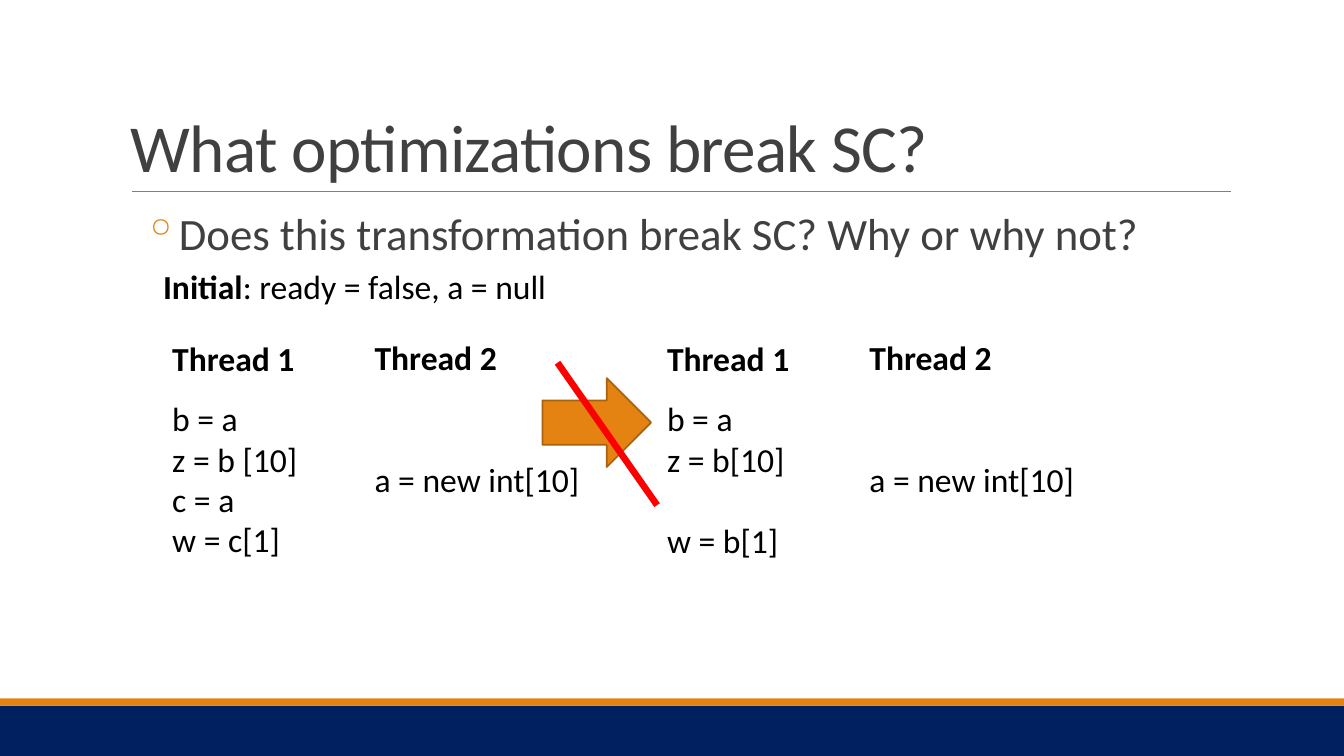
from lxml.etree import SubElement as Sub
from pptx import Presentation
from pptx.dml.color import RGBColor as RGB
from pptx.enum.shapes import MSO_CONNECTOR as Conn, MSO_SHAPE as Kind
from pptx.enum.text import MSO_ANCHOR as Anchor
from pptx.oxml.ns import qn
from pptx.util import Cm, Pt

HUES = {"navy": "002060", "orange": "E48312", "brown": "A9610D", "gray": "808080",
        "dark": "404040", "black": "000000", "red": "FF0000"}


class Deck:
    font = "Calibri"

    def __init__(self):
        self.prs = Presentation()
        self.prs.slide_width, self.prs.slide_height = Cm(33.87), Cm(19.05)
        self.slide = self.prs.slides.add_slide(self.prs.slide_layouts[6])

    def hue(self, name):
        return RGB.from_string(HUES[name])

    def shape(self, kind, box, fill, edge=None):
        item = self.slide.shapes.add_shape(kind, *map(Cm, box))
        item.shadow.inherit = False
        item.fill.solid()
        item.fill.fore_color.rgb = self.hue(fill)
        if edge:
            item.line.color.rgb = self.hue(edge)
            item.line.width = Pt(1.25)
        else:
            item.line.fill.background()

    def line(self, ends, hue, width):
        item = self.slide.shapes.add_connector(Conn.STRAIGHT, *map(Cm, ends))
        item.line.color.rgb = self.hue(hue)
        item.line.width = Pt(width)
        Sub(item._element.spPr, qn("a:effectLst"))

    def text(self, box, lines, size=24, hue="black"):
        """Each line is (text, count of bold leading letters, space before)."""
        frame = self.slide.shapes.add_textbox(*map(Cm, box)).text_frame
        frame.word_wrap = True
        for i, (words, bold, gap) in enumerate(lines):
            par = frame.paragraphs[0] if i == 0 else frame.add_paragraph()
            if gap:
                par.space_before = Pt(gap)
            for part, heavy in ((words[:bold], True), (words[bold:], False)):
                if part:
                    run = par.add_run()
                    run.text = part
                    run.font.name, run.font.size = self.font, Pt(size)
                    run.font.bold = heavy
                    run.font.color.rgb = self.hue(hue)
        return frame

    def title(self, box, words):
        frame = self.text(box, [(words, 0, 0)], 48, "dark")
        frame.vertical_anchor = Anchor.BOTTOM
        par = frame.paragraphs[0]
        par.line_spacing = 0.85
        par.runs[0]._r.get_or_add_rPr().set("spc", "-50")

    def bullet(self, box, words):
        frame = self.text(box, [(words, 0, 0)], 32, "dark")
        frame.margin_left = frame.margin_right = 0
        par = frame.paragraphs[0]
        par.line_spacing, par.space_after = 0.9, Pt(4)
        props = par._p.get_or_add_pPr()
        props.set("marL", str(Cm(1.07)))
        props.set("indent", str(Cm(-0.51)))
        tint = Sub(props, qn("a:buClr"))
        Sub(tint, qn("a:srgbClr")).set("val", HUES["orange"])
        Sub(props, qn("a:buChar")).set("char", "◦")

    def thread(self, box, name, code):
        self.text(box, [(name, len(name), 0)] + [(row, 0, gap) for row, gap in code])


def main():
    deck = Deck()

    # Footer bands and title rule
    deck.shape(Kind.RECTANGLE, (0, 17.78, 33.87, 1.27), "navy")
    deck.shape(Kind.RECTANGLE, (0, 17.6, 33.87, 0.18), "orange")
    deck.line((3.33, 4.83, 31.01, 4.83), "gray", 0.5)

    # Heading and question
    deck.title((3.05, 0.79, 27.94, 4.04), "What optimizations break SC?")
    deck.bullet((3.05, 5.2, 27.94, 2.24),
                "Does this transformation break SC? Why or why not?")
    deck.text((3.86, 6.58, 12.19, 1.27),
              [("Initial: ready = false, a = null", len("Initial"), 0)])

    # Threads before and after; gaps are in points, a full row is 29.3
    row = 29.3
    before = [("b = a", row / 2), ("z = b [10]", 0), ("c = a", 0), ("w = c[1]", 0)]
    after = [("b = a", row / 2), ("z = b[10]", 0), ("w = b[1]", row)]
    for left, code in ((4.09, before), (16.56, after)):
        deck.thread((left, 8.38, 5.99, 5.89), "Thread 1", code)
        deck.thread((left + 5.1, 8.36, 5.82, 4.37), "Thread 2",
                    [("a = new int[10]", 2 * row)])

    # Crossed-out arrow
    deck.shape(Kind.RIGHT_ARROW, (13.67, 9.53, 2.74, 2.24), "orange", "brown")
    deck.line((14.05, 9.14, 16.56, 12.73), "red", 4.75)

    deck.prs.save("out.pptx")


if __name__ == "__main__":
    main()
